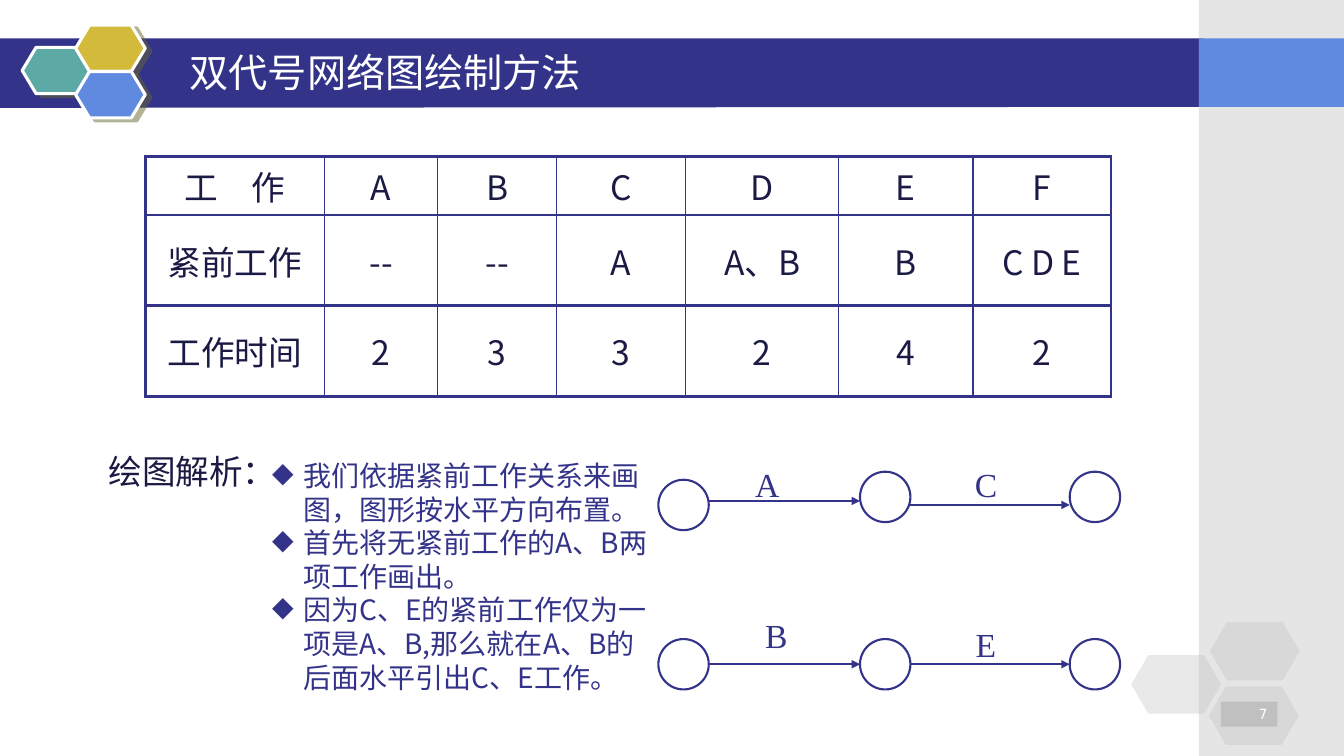
"""Builds the slide on drawing activity-on-arrow network diagrams."""
from lxml import etree
from pptx import Presentation
from pptx.dml.color import RGBColor
from pptx.enum.shapes import MSO_CONNECTOR, MSO_SHAPE
from pptx.enum.text import MSO_ANCHOR, MSO_AUTO_SIZE, PP_ALIGN
from pptx.oxml.ns import qn
from pptx.util import Inches, Pt

STRAIGHT = MSO_CONNECTOR.STRAIGHT
RECTANGLE, HEXAGON, ELLIPSE = MSO_SHAPE.RECTANGLE, MSO_SHAPE.HEXAGON, MSO_SHAPE.OVAL
MIDDLE = MSO_ANCHOR.MIDDLE
LEFT, CENTER, RIGHT = PP_ALIGN.LEFT, PP_ALIGN.CENTER, PP_ALIGN.RIGHT

NAVY = RGBColor(0x33, 0x33, 0x89)
INK = RGBColor(0x1A, 0x1A, 0x44)
BLUE = RGBColor(0x5F, 0x8A, 0xDF)
TEAL = RGBColor(0x5D, 0xA9, 0xA5)
GOLD = RGBColor(0xD4, 0xBA, 0x3A)
SILVER = RGBColor(0xC0, 0xC0, 0xC0)
OLIVE = RGBColor(0x66, 0x66, 0x33)
WHITE = RGBColor(0xFF, 0xFF, 0xFF)
SANS, SERIF, NUMBER_FONT = "Noto Sans CJK SC", "Times New Roman", "DejaVu Sans"

TITLE = "双代号网络图绘制方法"
PAGE_NUMBER = "7"
TASKS = [
    ["工　作", "A", "B", "C", "D", "E", "F"],
    ["紧前工作", "--", "--", "A", "A、B", "B", "C D E"],
    ["工作时间", "2", "3", "3", "2", "4", "2"],
]
COLUMN_WIDTHS = [1.78, 1.12, 1.18, 1.28, 1.52, 1.33, 1.37]
ROW_HEIGHTS = [0.54, 0.9, 0.9]
THICK_COLUMN_EDGES = {0, 6, 7}
THICK_ROW_EDGES = {0, 2, 3}
ANALYSIS_LABEL = "绘图解析："
ANALYSIS = [
    "我们依据紧前工作关系来画图，图形按水平方向布置。",
    "首先将无紧前工作的A、B两项工作画出。",
    "因为C、E的紧前工作仅为一项是A、B,那么就在A、B的后面水平引出C、E工作。",
]
BADGE = [(0.22, 0.47, TEAL), (0.75, 0.25, GOLD), (0.75, 0.71, BLUE)]
CORNER_HEXAGONS = [(11.22, 6.5), (12, 6.17), (11.99, 6.81)]
NODE_SIZE = 0.5
NODE_LEFTS = [6.53, 8.53, 10.61]
NODE_TOPS = [[4.76, 4.68, 4.68], [6.34, 6.34, 6.34]]
ARROW_HEIGHTS = [[4.97, 5.01], [6.59, 6.59]]
ARROW_LABELS = [("A", 7.36, 4.59), ("C", 9.53, 4.59), ("E", 9.53, 6.18), ("B", 7.45, 6.09)]


def add_child(parent, tag, **attributes):
    return etree.SubElement(parent, qn(tag), attributes)


def add_color(parent, color, alpha=100):
    node = add_child(parent, "a:srgbClr", val=str(color))
    if alpha < 100:
        add_child(node, "a:alpha", val=str(alpha * 1000))


def write(paragraph, text, size, font, color, align):
    paragraph.text = text
    paragraph.alignment = align
    for run in paragraph.runs:
        run.font.size = Pt(size)
        run.font.name = font
        run.font.color.rgb = color
        add_child(run.font._element, "a:ea", typeface=font)


def add_shape(shapes, kind, box, fill=None, line=None, width=1.5, alpha=100):
    shape = shapes.add_shape(kind, *map(Inches, box))
    shape.shadow.inherit = False
    if fill is None:
        shape.fill.background()
    else:
        shape.fill.solid()
        shape.fill.fore_color.rgb = fill
        if alpha < 100:
            color = shape.element.spPr.find(qn("a:solidFill"))[0]
            add_child(color, "a:alpha", val=str(alpha * 1000))
    if line is None:
        shape.line.fill.background()
    else:
        shape.line.color.rgb = line
        shape.line.width = Pt(width)
    return shape


def add_label(shapes, text, box, font, color):
    frame = add_shape(shapes, ELLIPSE, box).text_frame
    frame.word_wrap = False
    frame.vertical_anchor = MIDDLE
    write(frame.paragraphs[0], text, 24, font, color, CENTER)


def add_arrow(shapes, start, end, height):
    arrow = shapes.add_connector(STRAIGHT, *map(Inches, (start, height, end, height)))
    arrow.line.color.rgb = NAVY
    arrow.line.width = Pt(1.5)
    add_child(arrow.line._get_or_add_ln(), "a:tailEnd", type="triangle")
    add_child(arrow.element.spPr, "a:effectLst")


def add_background(shapes):
    band = shapes.build_freeform(Inches(-0.01), Inches(0.38), scale=1.0)
    corners = [(11.94, 0.38), (11.93, 1.06), (-0.01, 1.07)]
    band.add_line_segments([(Inches(x), Inches(y)) for x, y in corners], close=True)
    band = band.convert_to_shape()
    band.shadow.inherit = False
    band.fill.solid()
    band.fill.fore_color.rgb = NAVY
    band.line.fill.background()
    add_shape(shapes, RECTANGLE, (11.89, 0, 1.44, 7.5), SILVER, alpha=40)
    add_shape(shapes, RECTANGLE, (11.89, 0.38, 1.44, 0.68), BLUE)
    for left, top, color in BADGE:
        hexagon = add_shape(shapes, HEXAGON, (left, top, 0.69, 0.46), color, WHITE, 2.25)
        hexagon.adjustments[0] = 0.3
        effects = hexagon.element.spPr.find(qn("a:effectLst"))
        shadow = add_child(effects, "a:outerShdw", blurRad="0", dist=str(Pt(4.5)),
                           dir=str(27 * 60000), algn="ctr", rotWithShape="0")
        add_color(shadow, OLIVE, 50)
    for left, top in CORNER_HEXAGONS:
        hexagon = add_shape(shapes, HEXAGON, (left, top, 0.89, 0.58), SILVER, alpha=35)
        hexagon.adjustments[0] = 0.29
    page = add_shape(shapes, RECTANGLE, (12.11, 6.96, 0.56, 0.25), SILVER).text_frame
    page.vertical_anchor = MIDDLE
    write(page.paragraphs[0], PAGE_NUMBER, 10, NUMBER_FONT, WHITE, RIGHT)


def add_tasks(shapes):
    box = (1.44, 1.55, sum(COLUMN_WIDTHS), sum(ROW_HEIGHTS))
    table = shapes.add_table(len(TASKS), len(TASKS[0]), *map(Inches, box)).table
    table.first_row = table.horz_banding = False
    for column, width in zip(table.columns, COLUMN_WIDTHS):
        column.width = Inches(width)
    for r, tasks in enumerate(TASKS):
        table.rows[r].height = Inches(ROW_HEIGHTS[r])
        for c, task in enumerate(tasks):
            cell = table.cell(r, c)
            cell.vertical_anchor = MIDDLE
            write(cell.text_frame.paragraphs[0], task, 24, SANS, INK, CENTER)
            properties = cell._tc.get_or_add_tcPr()
            edges = {"a:lnL": c in THICK_COLUMN_EDGES, "a:lnR": c + 1 in THICK_COLUMN_EDGES,
                     "a:lnT": r in THICK_ROW_EDGES, "a:lnB": r + 1 in THICK_ROW_EDGES}
            for tag, thick in edges.items():
                edge = add_child(properties, tag, w=str(Pt(2.25 if thick else 1)))
                add_color(add_child(edge, "a:solidFill"), NAVY)
            cell.fill.background()


def add_analysis(shapes):
    add_label(shapes, ANALYSIS_LABEL, (1.59, 4.34, 0.64, 0.67), SANS, INK)
    frame = shapes.add_textbox(*map(Inches, (2.6, 4.5, 4.04, 2.77))).text_frame
    frame.word_wrap = True
    for i, point in enumerate(ANALYSIS):
        paragraph = frame.add_paragraph() if i else frame.paragraphs[0]
        write(paragraph, point, 20, SANS, NAVY, LEFT)
        paragraph.line_spacing = Pt(24)
        properties = paragraph._p.get_or_add_pPr()
        properties.set("marL", str(Inches(0.31)))
        properties.set("indent", str(Inches(-0.31)))
        add_child(properties, "a:buChar", char="◆")


def add_network(shapes):
    for tops, heights in zip(NODE_TOPS, ARROW_HEIGHTS):
        for left, top in zip(NODE_LEFTS, tops):
            add_shape(shapes, ELLIPSE, (left, top, NODE_SIZE, NODE_SIZE), line=NAVY)
        for start, end, height in zip(NODE_LEFTS, NODE_LEFTS[1:], heights):
            add_arrow(shapes, start + NODE_SIZE, end, height)
    for text, left, top in ARROW_LABELS:
        add_label(shapes, text, (left, top, 0.5, 0.42), SERIF, NAVY)


def add_title(shapes):
    title = shapes.title
    title.left, title.top, title.width, title.height = map(Inches, (1.78, 0.42, 9.67, 0.58))
    title.element.getparent().append(title.element)
    title.text_frame.auto_size = MSO_AUTO_SIZE.NONE
    title.text_frame.vertical_anchor = MIDDLE
    write(title.text_frame.paragraphs[0], TITLE, 28, SANS, WHITE, LEFT)


def main():
    deck = Presentation()
    deck.slide_width, deck.slide_height = Inches(13.33), Inches(7.5)
    shapes = deck.slides.add_slide(deck.slide_layouts[5]).shapes
    for add_part in (add_background, add_tasks, add_analysis, add_title, add_network):
        add_part(shapes)
    deck.save("out.pptx")


if __name__ == "__main__":
    main()
